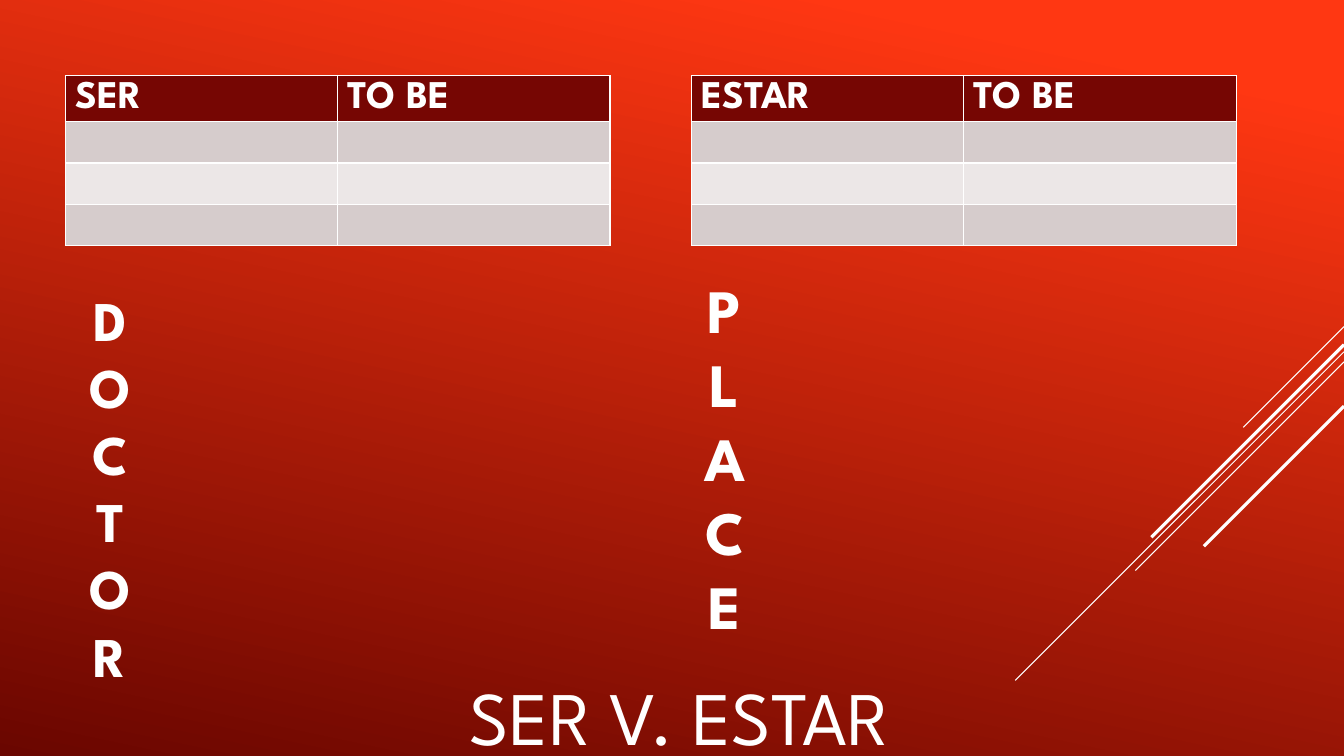
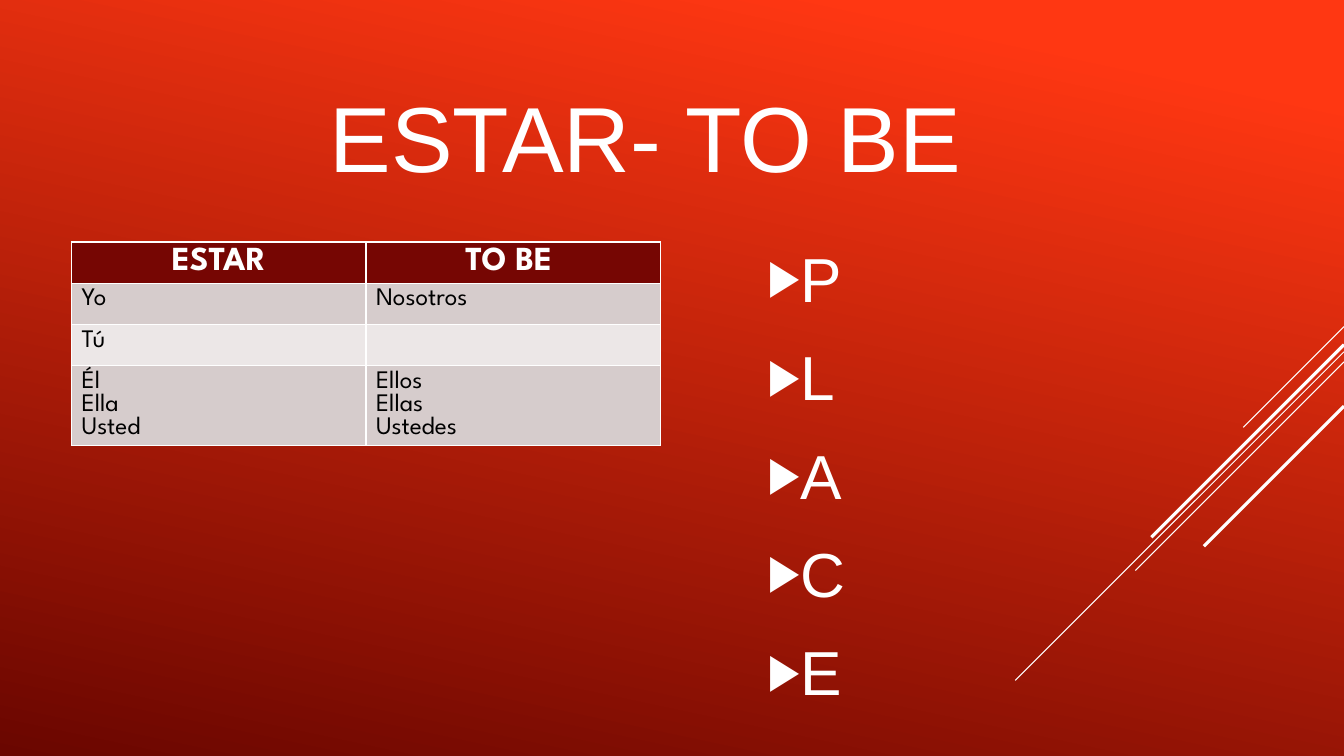
from lxml import etree
from pptx import Presentation
from pptx.dml.color import RGBColor
from pptx.enum import text as t
from pptx.oxml import ns
from pptx.util import Inches, Pt

# Shared look
COLORS = {"white": "FFFFFF", "black": "000000", "glow": "FF3712", "dark": "6A0600",
          "header": "760603", "odd": "D6CCCC", "even": "ECE7E7"}
SPARTAN, ARIAL = "League Spartan", "Arial"
WIDTH, HEIGHT = 13.33, 7.5
ROW_HEIGHT = 0.41

# Diagonal rays from the right edge: start height, run, line weight
RAYS = [(3.24, 1.0, 0.75), (3.49, 3.26, 0.75), (3.59, 2.07, 0.75),
        (3.42, 1.91, 2.25), (4.03, 1.39, 2.25)]

# Content: tables as left, top, column width, header size, header alignment, rows
EMPTY_ROWS = [("", "")] * 3
VERB_TABLES = [
    (0.65, 0.75, 2.7, 28, t.PP_ALIGN.LEFT, [("SER", "TO BE")] + EMPTY_ROWS),
    (6.86, 0.75, 2.7, 28, t.PP_ALIGN.LEFT, [("ESTAR", "TO BE")] + EMPTY_ROWS),
]
PRONOUN_TABLE = (0.71, 2.4, 2.92, 24, t.PP_ALIGN.CENTER, [
    ("ESTAR", "TO BE "),
    ("Yo", "Nosotros"),
    ("Tú", ""),
    ("Él\nElla\nUsted", "Ellos\nEllas\nUstedes"),
])
# Acronyms: word, box, size
ACRONYMS = [("PLACE", (6.85, 2.65, 0.68, 4.71), 44),
            ("DOCTOR", (0.75, 2.78, 0.69, 4.14), 40)]


def rgb(name):
    return RGBColor.from_string(COLORS[name])


def add_run(paragraph, words, size, font=SPARTAN, color="white", bold=False):
    run = paragraph.add_run()
    run.text = words
    run.font.size, run.font.name, run.font.bold = Pt(size), font, bold
    run.font.color.rgb = rgb(color)


def paragraphs(frame, lines):
    """Yield each line with its paragraph, starting with the one already there."""
    for i, line in enumerate(lines):
        yield line, frame.add_paragraph() if i else frame.paragraphs[0]


def place(shape, box):
    shape.left, shape.top, shape.width, shape.height = map(Inches, box)


def style_master(master, slide):
    fill = master.background.fill
    fill.gradient()
    fill.gradient_angle = 360 - 102
    for stop, position, color in zip(fill.gradient_stops, (0.1, 1), ("glow", "dark")):
        stop.position, stop.color.rgb = position, rgb(color)
    for i, (top, run, weight) in enumerate(RAYS):
        ends = map(Inches, (WIDTH, top, WIDTH - run, top + run))
        ray = slide.shapes.add_connector(1, *ends)
        ray.line.color.rgb, ray.line.width = rgb("white"), Pt(weight)
        etree.SubElement(ray.element.spPr, ns.qn("a:effectLst"))
        ray.element.nvCxnSpPr.cNvPr.set("id", str(100 + i))
        master.shapes.element.append(ray.element)


def set_title(slide, words, box, size, font, align):
    title = slide.shapes.title
    place(title, box)
    frame = title.text_frame
    frame.auto_size = t.MSO_AUTO_SIZE.NONE
    frame.vertical_anchor = t.MSO_ANCHOR.MIDDLE
    frame.paragraphs[0].alignment = align
    add_run(frame.paragraphs[0], words, size, font)


def add_verb_table(slide, left, top, column, header_size, header_align, rows):
    table = slide.shapes.add_table(
        len(rows), 2, Inches(left), Inches(top),
        Inches(2 * column), Inches(ROW_HEIGHT * len(rows))).table
    for r, row in enumerate(rows):
        band = "header" if r == 0 else ("even", "odd")[r % 2]
        for c, words in enumerate(row):
            cell = table.cell(r, c)
            cell.fill.solid()
            cell.fill.fore_color.rgb = rgb(band)
            if not words:
                continue
            for line, paragraph in paragraphs(cell.text_frame, words.split("\n")):
                if r == 0:
                    paragraph.alignment = header_align
                    add_run(paragraph, line, header_size, bold=True)
                else:
                    add_run(paragraph, line, 18, color="black")


def add_acronym(slide, word, box, size):
    frame = slide.shapes.add_textbox(*map(Inches, box)).text_frame
    frame.word_wrap = False
    frame.auto_size = t.MSO_AUTO_SIZE.SHAPE_TO_FIT_TEXT
    for letter, paragraph in paragraphs(frame, word):
        paragraph.alignment = t.PP_ALIGN.CENTER
        paragraph.line_spacing = Pt(1.2 * size)
        add_run(paragraph, letter, size, bold=True)


def add_bullet(paragraph):
    props = paragraph._p.get_or_add_pPr()
    props.set("marL", str(Inches(0.31)))
    props.set("indent", str(-Inches(0.31)))
    color = etree.SubElement(props, ns.qn("a:buClr"))
    etree.SubElement(color, ns.qn("a:srgbClr"), val=COLORS["white"])
    etree.SubElement(props, ns.qn("a:buSzPct"), val="80000")
    etree.SubElement(props, ns.qn("a:buFont"), typeface=ARIAL)
    etree.SubElement(props, ns.qn("a:buChar"), char="▶")


def fill_letter_list(body, word, box):
    place(body, box)
    frame = body.text_frame
    frame.auto_size = t.MSO_AUTO_SIZE.NONE
    frame.vertical_anchor = t.MSO_ANCHOR.MIDDLE
    for i, (letter, paragraph) in enumerate(paragraphs(frame, word)):
        add_bullet(paragraph)
        paragraph.space_before = Pt(11 if i else 0)
        paragraph.space_after = Pt(6)
        add_run(paragraph, letter, 44.4, ARIAL)


def main():
    prs = Presentation()
    prs.slide_width, prs.slide_height = Inches(WIDTH), Inches(HEIGHT)

    # Ser and estar side by side
    comparison = prs.slides.add_slide(prs.slide_layouts[5])
    style_master(prs.slide_master, comparison)
    set_title(comparison, "SER V. ESTAR ", (2.17, 6.27, 9.33, 1.65), 54, SPARTAN,
              t.PP_ALIGN.CENTER)
    for verb_table in VERB_TABLES:
        add_verb_table(comparison, *verb_table)
    for acronym in ACRONYMS:
        add_acronym(comparison, *acronym)

    # Estar with its pronouns
    estar = prs.slides.add_slide(prs.slide_layouts[1])
    set_title(estar, "ESTAR- TO BE", (3.17, 0.64, 9.42, 1.41), 66, ARIAL,
              t.PP_ALIGN.LEFT)
    add_verb_table(estar, *PRONOUN_TABLE)
    fill_letter_list(estar.placeholders[1], "PLACE", (7.51, 2.73, 5.4, 3.95))

    prs.save("out.pptx")


if __name__ == "__main__":
    main()
